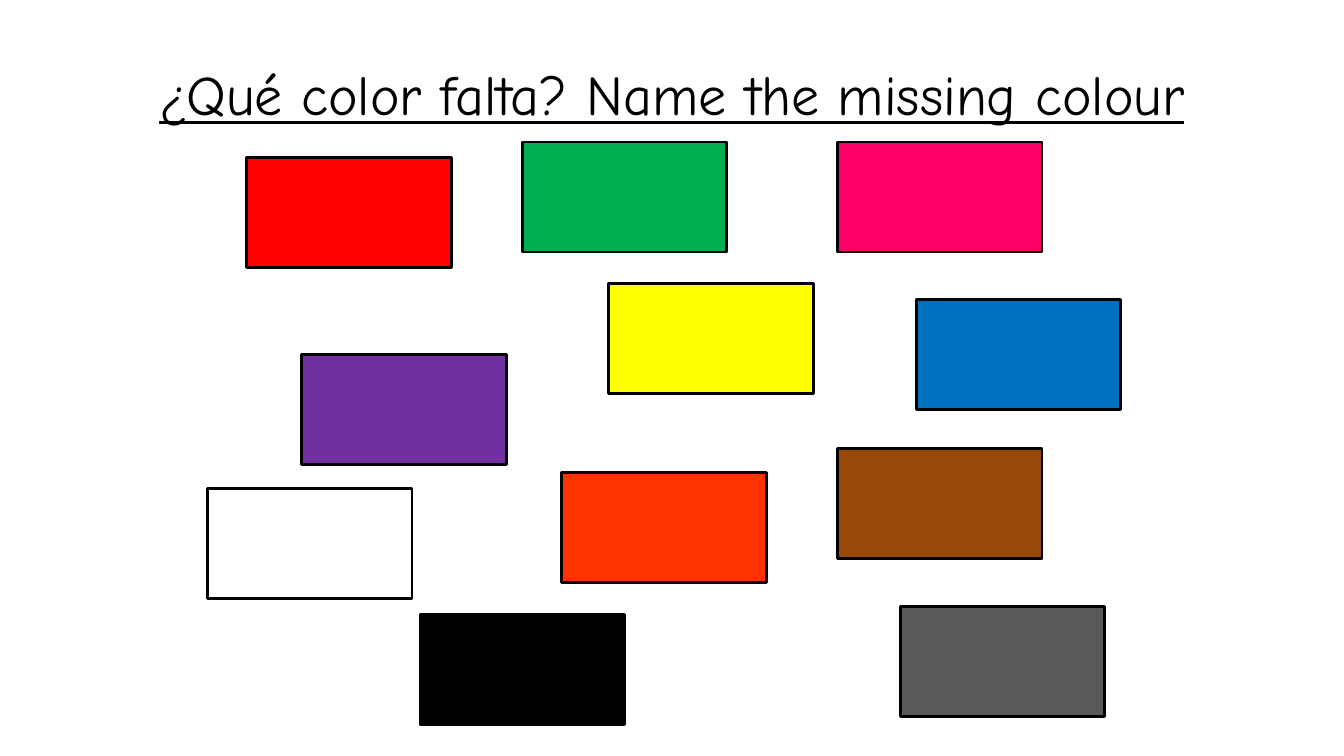
from pptx import Presentation
from pptx.dml.color import RGBColor
from pptx.enum.shapes import MSO_SHAPE as Shape
from pptx.enum.text import MSO_ANCHOR as Anchor, PP_ALIGN as Align
from pptx.util import Pt

TITLE = "¿Qué color falta? Name the missing colour"
FONT = "Comic Neue"
COLOURS = {
    "red": "FF0000",
    "blue": "0070C0",
    "green": "00B050",
    "purple": "7030A0",
    "white": "FFFFFF",
    "black": "000000",
    "grey": "595959",
    "orange": "FF3300",
    "brown": "984807",
    "yellow": "FFFF00",
    "pink": "FF0066",
}
CARD_POSITIONS = {
    "red": (176.2, 112.5),
    "blue": (654.5, 213.8),
    "green": (373, 101.4),
    "purple": (215.5, 253.2),
    "white": (148.2, 348.8),
    "black": (300, 438.8),
    "grey": (643, 433.2),
    "orange": (401.2, 337.5),
    "brown": (598.2, 320.6),
    "yellow": (434.9, 202.4),
    "pink": (598.2, 101.4),
}
CARD_WIDTH, CARD_HEIGHT = 146.2, 78.6
SLIDE_WIDTH, SLIDE_HEIGHT = 960, 540
TITLE_MARGIN, TITLE_TOP, TITLE_HEIGHT = 48, 21.6, 90


def colour(name):
    return RGBColor.from_string(COLOURS[name])


def add_title(slide):
    box = slide.shapes.add_textbox(
        Pt(TITLE_MARGIN), Pt(TITLE_TOP),
        Pt(SLIDE_WIDTH - 2 * TITLE_MARGIN), Pt(TITLE_HEIGHT))
    frame = box.text_frame
    frame.word_wrap = True
    frame.vertical_anchor = Anchor.MIDDLE
    paragraph = frame.paragraphs[0]
    paragraph.alignment = Align.CENTER
    run = paragraph.add_run()
    run.text = TITLE
    run.font.name = FONT
    run.font.size = Pt(40)
    run.font.underline = True
    run.font.color.rgb = colour("black")


def add_card(slide, name, left, top):
    card = slide.shapes.add_shape(
        Shape.RECTANGLE, Pt(left), Pt(top), Pt(CARD_WIDTH), Pt(CARD_HEIGHT))
    card.shadow.inherit = False
    card.fill.solid()
    card.fill.fore_color.rgb = colour(name)
    card.line.color.rgb = colour("black")
    card.line.width = Pt(2)


def main():
    presentation = Presentation()
    presentation.slide_width = Pt(SLIDE_WIDTH)
    presentation.slide_height = Pt(SLIDE_HEIGHT)
    slide = presentation.slides.add_slide(presentation.slide_layouts[6])
    add_title(slide)
    for name, (left, top) in CARD_POSITIONS.items():
        add_card(slide, name, left, top)
    presentation.save("out.pptx")


if __name__ == "__main__":
    main()
